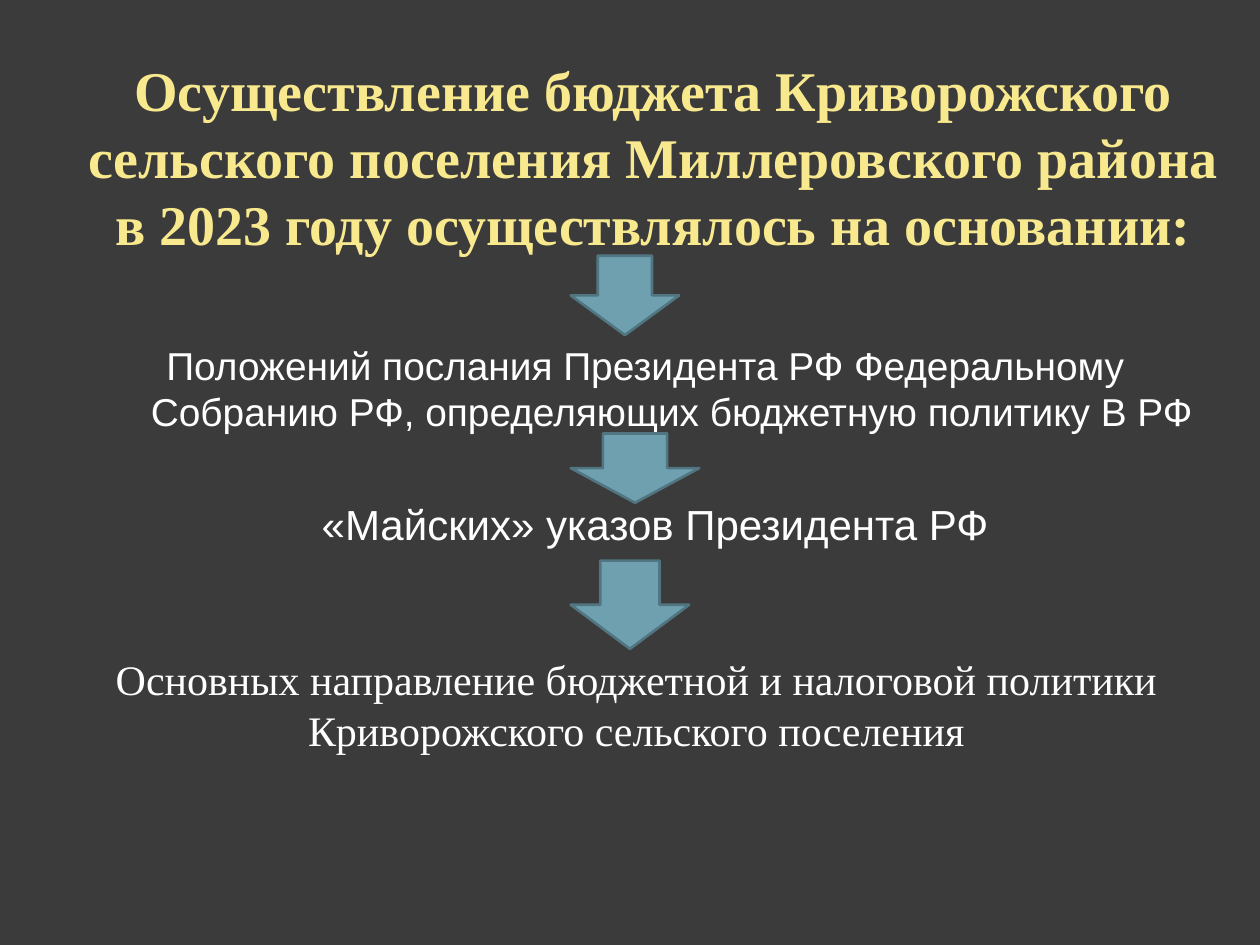
from pptx import Presentation
from pptx.dml.color import RGBColor
from pptx.enum.shapes import MSO_SHAPE as Shape
from pptx.enum.text import MSO_ANCHOR as Anchor, MSO_AUTO_SIZE as AutoSize, PP_ALIGN as Align
from pptx.util import Inches, Pt

COLORS = {
    "background": "3B3B3B",
    "heading": "F9E98E",
    "text": "FFFFFF",
    "arrow": "6EA0B0",
    "outline": "517682",
}
SERIF, SANS = "Times New Roman", "Arial"

presentation = Presentation()
presentation.slide_width, presentation.slide_height = Inches(10), Inches(7.5)

# Grid of 100 columns by 75 rows
column = presentation.slide_width / 100
row = presentation.slide_height / 75


def grid(left, top, width, height):
    return [int(n * unit) for n, unit in zip((left, top, width, height), (column, row) * 2)]


def write(shape, text, color, indent=False, **font_format):
    frame = shape.text_frame
    for name, value in {"word_wrap": True, "auto_size": AutoSize.NONE,
                        "vertical_anchor": Anchor.TOP}.items():
        setattr(frame, name, value)
    frame.text = text
    paragraph = frame.paragraphs[0]
    paragraph.alignment = Align.CENTER
    if indent:
        properties = paragraph._p.get_or_add_pPr()
        properties.set("marL", str(Inches(0.46)))
        properties.set("indent", str(Inches(-0.42)))
    for name, value in font_format.items():
        setattr(paragraph.font, name, value)
    paragraph.font.color.rgb = RGBColor.from_string(COLORS[color])


slide = presentation.slides.add_slide(presentation.slide_layouts[5])
slide.background.fill.solid()
slide.background.fill.fore_color.rgb = RGBColor.from_string(COLORS["background"])

# Title placeholder holds the concluding basis at the foot of the flow
title = slide.shapes.title
title.left, title.top, title.width, title.height = grid(5.5, 51.4, 90, 12.5)
write(title, "Основных направление бюджетной и налоговой политики "
             "Криворожского сельского поселения",
      "text", name=SERIF, size=Pt(24), bold=False)

# Heading and the first two bases
texts = [
    ("Осуществление бюджета Криворожского сельского поселения Миллеровского района "
     "в 2023 году осуществлялось на основании:", (5.5, 3.9, 92.7, 18.8), "heading",
     {"name": SERIF, "size": Pt(32), "bold": True}),
    ("Положений послания Президента РФ Федеральному Собранию РФ, "
     "определяющих бюджетную политику В РФ", (5.5, 26.6, 91.1, 10), "text",
     {"name": SANS, "size": Pt(22.2), "indent": True}),
    ("«Майских» указов Президента РФ", (7.8, 39.1, 88, 9.7), "text",
     {"name": SANS, "size": Pt(24), "indent": True}),
]
for text, place, color, text_format in texts:
    write(slide.shapes.add_textbox(*grid(*place)), text, color, **text_format)

# Down arrows share a left edge
for top, width, height in [(20.3, 8.6, 6.3), (34.4, 10.2, 5.5), (44.5, 9.4, 7)]:
    arrow = slide.shapes.add_shape(Shape.DOWN_ARROW, *grid(45.3, top, width, height))
    arrow.shadow.inherit = False
    arrow.fill.solid()
    arrow.fill.fore_color.rgb = RGBColor.from_string(COLORS["arrow"])
    arrow.line.color.rgb = RGBColor.from_string(COLORS["outline"])
    arrow.line.width = Pt(1.5)

presentation.save("out.pptx")
